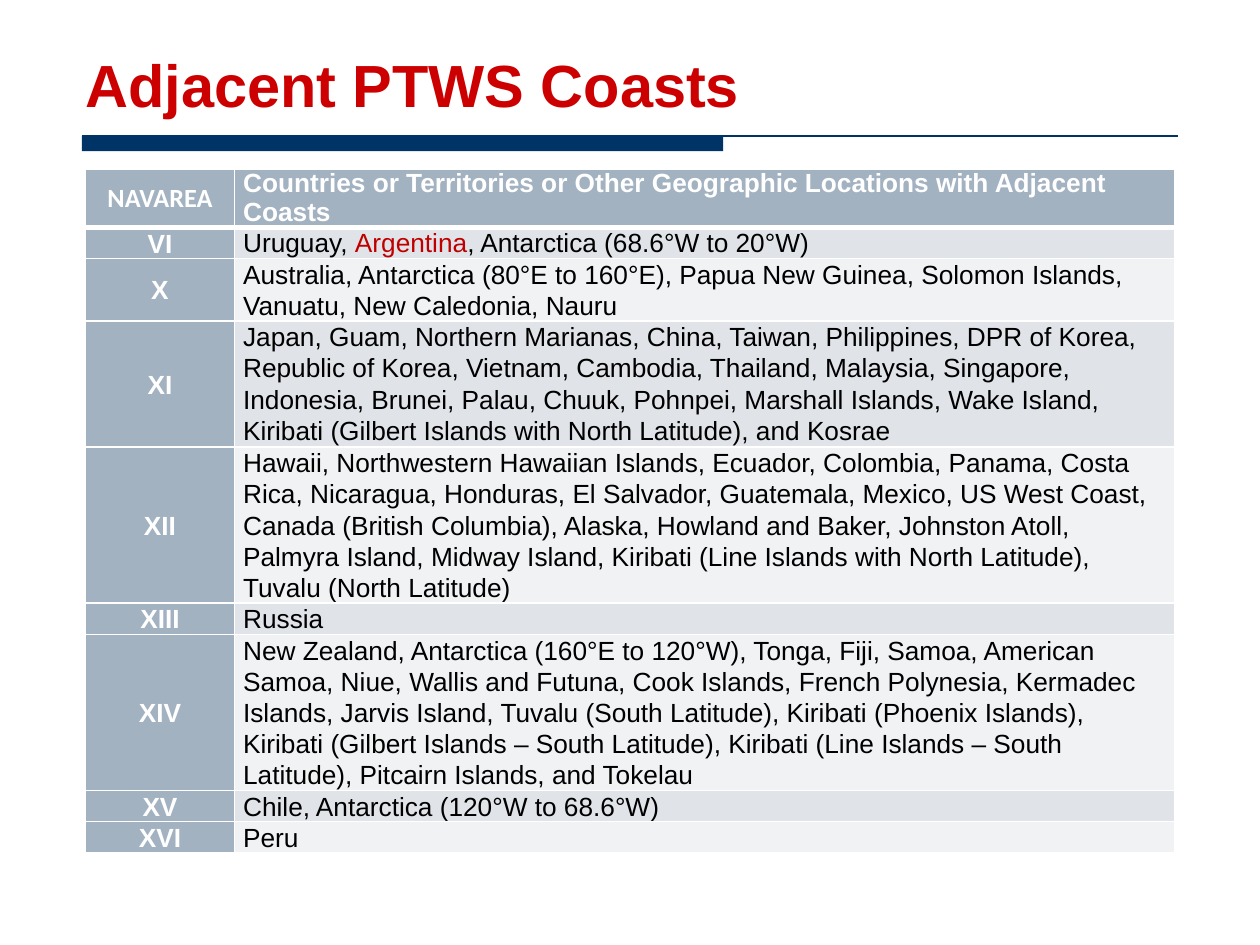
from lxml.etree import SubElement
from pptx import Presentation
from pptx.dml.color import RGBColor
from pptx.enum.shapes import MSO_CONNECTOR, MSO_SHAPE
from pptx.enum.text import MSO_ANCHOR, MSO_AUTO_SIZE, PP_ALIGN
from pptx.oxml.ns import qn
from pptx.util import Inches, Pt

RED = RGBColor(0xCC, 0x00, 0x00)
DARK_RED = RGBColor(0xC0, 0x00, 0x00)
NAVY = RGBColor(0x00, 0x33, 0x66)
WHITE = RGBColor(0xFF, 0xFF, 0xFF)
BLACK = RGBColor(0x00, 0x00, 0x00)
STEEL = RGBColor(0xA3, 0xB2, 0xC1)
BANDS = [RGBColor(0xE0, 0xE4, 0xE9), RGBColor(0xF0, 0xF2, 0xF4)]

TITLE = "Adjacent PTWS Coasts"
HEADERS = [
    "NAVAREA",
    "Countries or Territories or Other Geographic Locations with Adjacent Coasts",
]
HIGHLIGHT = "Argentina"
HEADER_HEIGHT = 0.4
AREAS = [
    ("VI", 0.19, "Uruguay, Argentina, Antarctica (68.6°W to 20°W)"),
    ("X", 0.39, "Australia, Antarctica (80°E to 160°E), Papua New Guinea, "
     "Solomon Islands, Vanuatu, New Caledonia, Nauru"),
    ("XI", 1, "Japan, Guam, Northern Marianas, China, Taiwan, Philippines, "
     "DPR of Korea, Republic of Korea, Vietnam, Cambodia, Thailand, Malaysia, "
     "Singapore, Indonesia, Brunei, Palau, Chuuk, Pohnpei, Marshall Islands, "
     "Wake Island, Kiribati (Gilbert Islands with North Latitude), and Kosrae"),
    ("XII", 1.2, "Hawaii, Northwestern Hawaiian Islands, Ecuador, Colombia, "
     "Panama, Costa Rica, Nicaragua, Honduras, El Salvador, Guatemala, Mexico, "
     "US West Coast, Canada (British Columbia), Alaska, Howland and Baker, "
     "Johnston Atoll, Palmyra Island, Midway Island, "
     "Kiribati (Line Islands with North Latitude), Tuvalu (North Latitude)"),
    ("XIII", 0.19, "Russia"),
    ("XIV", 1.2, "New Zealand, Antarctica (160°E to 120°W), Tonga, Fiji, Samoa, "
     "American Samoa, Niue, Wallis and Futuna, Cook Islands, French Polynesia, "
     "Kermadec Islands, Jarvis Island, Tuvalu (South Latitude), "
     "Kiribati (Phoenix Islands), Kiribati (Gilbert Islands – South Latitude), "
     "Kiribati (Line Islands – South Latitude), Pitcairn Islands, and Tokelau"),
    ("XV", 0.19, "Chile, Antarctica (120°W to 68.6°W)"),
    ("XVI", 0.19, "Peru"),
]


def set_font(font, size, color, bold, name="Arial"):
    font.name = name
    font.size = Pt(size)
    font.bold = bold
    font.color.rgb = color


def add_title(slide, left, top, width, height):
    title = slide.shapes.title
    title.left, title.top, title.width, title.height = left, top, width, height
    frame = title.text_frame
    frame.text = TITLE
    frame.word_wrap = True
    frame.auto_size = MSO_AUTO_SIZE.NONE
    frame.vertical_anchor = MSO_ANCHOR.BOTTOM
    paragraph = frame.paragraphs[0]
    paragraph.alignment = PP_ALIGN.LEFT
    paragraph.line_spacing = 1.1
    set_font(paragraph.font, 34, RED, True)


def add_title_rule(slide, left, top, width, height):
    bar = slide.shapes.add_shape(
        MSO_SHAPE.RECTANGLE, left, top, Inches(5.09), height)
    bar.shadow.inherit = False
    bar.fill.solid()
    bar.fill.fore_color.rgb = NAVY
    bar.line.fill.background()
    line = slide.shapes.add_connector(
        MSO_CONNECTOR.STRAIGHT, left, top, left + width, top)
    line.line.color.rgb = NAVY
    line.line.width = Pt(0.75)
    SubElement(line._element.spPr, qn("a:effectLst"))


def add_borders(cell, top_width, bottom_width):
    properties = cell._tc.get_or_add_tcPr()
    widths = {"lnL": 1, "lnR": 1, "lnT": top_width, "lnB": bottom_width}
    for side, width in widths.items():
        border = SubElement(properties, qn(f"a:{side}"), w=str(Pt(width)))
        fill = SubElement(border, qn("a:solidFill"))
        SubElement(fill, qn("a:srgbClr"), val=str(WHITE))


def fill_cell(cell, text, row, column):
    is_header, is_label = row == 0, column == 0
    is_strong = is_header or is_label
    add_borders(cell, 3 if row == 1 else 1, 3 if is_header else 1)
    cell.fill.solid()
    cell.fill.fore_color.rgb = STEEL if is_strong else BANDS[(row - 1) % 2]
    cell.margin_left = cell.margin_right = Inches(0.07)
    cell.margin_top = cell.margin_bottom = 0
    cell.vertical_anchor = MSO_ANCHOR.MIDDLE if is_strong else MSO_ANCHOR.TOP
    paragraph = cell.text_frame.paragraphs[0]
    paragraph.alignment = PP_ALIGN.CENTER if is_label else PP_ALIGN.LEFT
    paragraph.line_spacing = 1.0 if is_header else 1.07
    set_font(paragraph.font, 15, WHITE if is_strong else BLACK, is_strong,
             "Calibri" if is_header and is_label else "Arial")
    before, match, after = text.partition(HIGHLIGHT)
    for part in filter(None, (before, match, after)):
        run = paragraph.add_run()
        run.text = part
        if part == HIGHLIGHT:
            run.font.color.rgb = DARK_RED


def add_area_table(slide, left, top, width, height):
    rows = [HEADERS] + [(area, coasts) for area, _, coasts in AREAS]
    heights = [HEADER_HEIGHT] + [row_height for _, row_height, _ in AREAS]
    table = slide.shapes.add_table(
        len(rows), len(HEADERS), left, top, width, height).table
    table.columns[0].width = Inches(1.18)
    table.columns[1].width = width - Inches(1.18)
    for row, (texts, row_height) in enumerate(zip(rows, heights)):
        table.rows[row].height = Inches(row_height)
        for column, text in enumerate(texts):
            fill_cell(table.cell(row, column), text, row, column)


def main():
    presentation = Presentation()
    presentation.slide_width = Inches(10)
    presentation.slide_height = Inches(7.5)
    slide = presentation.slides.add_slide(presentation.slide_layouts[5])
    add_title_rule(slide, Inches(0.65), Inches(1.08), Inches(8.7), Inches(0.12))
    add_title(slide, Inches(0.58), Inches(0.17), Inches(8.74), Inches(0.83))
    add_area_table(slide, Inches(0.68), Inches(1.34), Inches(8.64), Inches(4.95))
    presentation.save("out.pptx")


if __name__ == "__main__":
    main()
